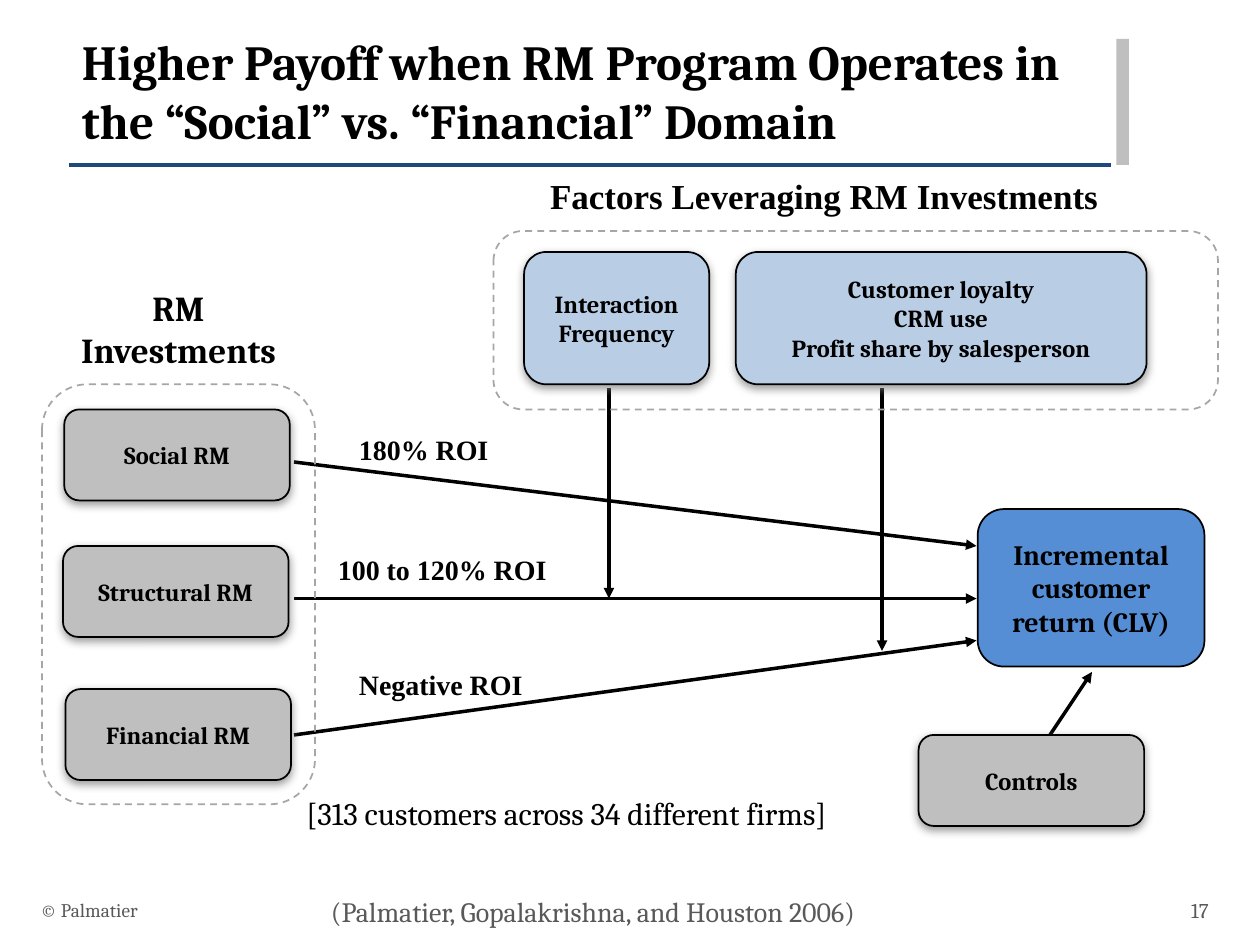
from dataclasses import dataclass

from lxml.etree import SubElement
from pptx import Presentation
from pptx.dml.color import RGBColor
from pptx.enum.dml import MSO_LINE_DASH_STYLE as Dash
from pptx.enum.shapes import MSO_CONNECTOR as Conn, MSO_SHAPE as Shape
from pptx.enum.text import MSO_ANCHOR as Anchor, MSO_AUTO_SIZE as Auto, PP_ALIGN as Align
from pptx.oxml import parse_xml
from pptx.oxml.ns import nsdecls, qn
from pptx.util import Pt


@dataclass(frozen=True)
class Theme:
    black: str = "000000"
    grey: str = "BFBFBF"
    frame: str = "A6A6A6"
    muted: str = "595959"
    navy: str = "1F497D"
    pale: str = "B9CDE5"
    blue: str = "558ED5"
    serif: str = "Cambria"
    times: str = "Times New Roman"
    title: int = 28
    heading: int = 20
    note: int = 18
    label: int = 16
    box: int = 14
    number: int = 12
    footer: int = 11


T = Theme()


@dataclass(frozen=True)
class Box:
    x: float
    y: float
    w: float
    h: float
    lines: tuple[str, ...]
    fill: str = T.grey
    size: int = T.box
    shadow: bool = True


@dataclass(frozen=True)
class Label:
    x: float
    y: float
    w: float
    h: float
    text: str
    size: int = T.label
    font: str = T.times
    bold: bool = True
    color: str = T.black
    align: Align = Align.LEFT
    anchor: Anchor = Anchor.TOP


@dataclass(frozen=True)
class Line:
    x1: float
    y1: float
    x2: float
    y2: float
    color: str = T.black
    arrow: bool = True


@dataclass(frozen=True)
class Frame:
    x: float
    y: float
    w: float
    h: float


TITLE = Label(39.6, 14.4, 594.7, 63.4,
              "Higher Payoff when RM Program Operates in the “Social” vs. “Financial” Domain",
              T.title, T.serif)
RULE = Line(39.6, 94.3, 635, 94.3, T.navy, False)
ARROWS = (
    Line(168, 342, 558, 342),
    Line(168, 420, 558, 366),
    Line(504, 222, 504, 372),
    Line(168, 264, 558, 312),
    Line(600, 420, 624, 384),
    Line(348, 222, 348, 342),
)
FRAMES = (Frame(24, 219.6, 156, 240), Frame(282, 132, 414, 102))
LABELS = (
    Label(36, 160, 132, 55.4, "RM Investments", T.heading, T.serif, align=Align.CENTER),
    Label(216, 96, 510, 31.5, "Factors Leveraging RM Investments", T.heading, align=Align.CENTER),
    Label(198, 243.5, 90, 26.6, "180% ROI"),
    Label(198, 378, 126, 26.6, "Negative ROI"),
    Label(186, 312, 138, 26.6, "100 to 120% ROI"),
    Label(168, 450, 360, 29, "[313 customers across 34 different firms]", T.note, T.serif, False),
    Label(182, 507.6, 360, 26.6, "(Palmatier, Gopalakrishna, and Houston 2006)",
          T.label, T.serif, False, T.muted),
    Label(16, 505.5, 482, 28.8, "© Palmatier", T.footer, T.serif, False, T.muted,
          anchor=Anchor.MIDDLE),
    Label(653.8, 505.5, 44, 28.8, "17", T.number, T.serif, False, T.muted,
          Align.RIGHT, Anchor.MIDDLE),
)
BOXES = (
    Box(36.7, 234, 128.9, 52, ("Social RM",)),
    Box(36, 312, 128.9, 52, ("Structural RM",)),
    Box(37.4, 393.8, 128.9, 52, ("Financial RM",)),
    Box(524.9, 420, 128.9, 52, ("Controls",)),
    Box(299.5, 144, 105.8, 75.6, ("Interaction Frequency",), T.pale),
    Box(420.5, 144, 234.7, 75.6,
        ("Customer loyalty", "CRM use", "Profit share by salesperson"), T.pale),
    Box(558.7, 290.9, 129.6, 90, ("Incremental customer return (CLV)",), T.blue, T.label, False),
)


def rgb(color: str) -> RGBColor:
    return RGBColor.from_string(color)


def place(b) -> tuple:
    return Pt(b.x), Pt(b.y), Pt(b.w), Pt(b.h)


def write(tf, lines, size, font, bold, color, align, anchor) -> None:
    tf.word_wrap = True
    tf.auto_size = Auto.NONE
    tf.vertical_anchor = anchor
    for i, line in enumerate(lines):
        p = tf.add_paragraph() if i else tf.paragraphs[0]
        p.alignment = align
        r = p.add_run()
        r.text = line
        r.font.size, r.font.name, r.font.bold = Pt(size), font, bold
        r.font.color.rgb = rgb(color)


def write_label(tf, b: Label) -> None:
    write(tf, (b.text,), b.size, b.font, b.bold, b.color, b.align, b.anchor)


def draw_title(s, b: Label) -> None:
    sp = s.shapes.title
    sp.left, sp.top, sp.width, sp.height = place(b)
    write_label(sp.text_frame, b)


def draw_line(s, b: Line) -> None:
    sp = s.shapes.add_connector(Conn.STRAIGHT, Pt(b.x1), Pt(b.y1), Pt(b.x2), Pt(b.y2))
    sp.line.color.rgb = rgb(b.color)
    sp.line.width = Pt(2)
    if b.arrow:
        SubElement(sp.line._get_or_add_ln(), qn("a:tailEnd"), type="triangle")
    SubElement(sp._element.spPr, qn("a:effectLst"))


def draw_bar(s, b: Frame) -> None:
    sp = s.shapes.add_shape(Shape.RECTANGLE, *place(b))
    sp.shadow.inherit = False
    sp.fill.solid()
    sp.fill.fore_color.rgb = rgb(T.grey)
    sp.line.fill.background()


def rounded(s, b, line: str):
    sp = s.shapes.add_shape(Shape.ROUNDED_RECTANGLE, *place(b))
    sp.shadow.inherit = False
    sp.line.color.rgb = rgb(line)
    sp.line.width = Pt(1)
    return sp


def draw_frame(s, b: Frame) -> None:
    sp = rounded(s, b, T.frame)
    sp.fill.background()
    sp.line.dash_style = Dash.DASH


def draw_label(s, b: Label) -> None:
    write_label(s.shapes.add_textbox(*place(b)).text_frame, b)


def draw_box(s, b: Box) -> None:
    sp = rounded(s, b, T.black)
    sp.fill.solid()
    sp.fill.fore_color.rgb = rgb(b.fill)
    if b.shadow:
        sp._element.spPr.find(qn("a:effectLst")).append(parse_xml(
            f'<a:outerShdw {nsdecls("a")} blurRad="{Pt(5)}" dist="{Pt(2)}" dir="5400000" '
            'rotWithShape="0"><a:srgbClr val="808080"><a:alpha val="75000"/>'
            '</a:srgbClr></a:outerShdw>'))
    write(sp.text_frame, b.lines, b.size, T.serif, True, T.black, Align.CENTER, Anchor.MIDDLE)


def main() -> None:
    prs = Presentation()
    prs.slide_width, prs.slide_height = Pt(720), Pt(540)
    s = prs.slides.add_slide(prs.slide_layouts[5])
    draw_title(s, TITLE)
    draw_bar(s, Frame(637.9, 22.3, 7.2, 72))
    for line in (RULE, *ARROWS):
        draw_line(s, line)
    for frame in FRAMES:
        draw_frame(s, frame)
    for label in LABELS:
        draw_label(s, label)
    for box in BOXES:
        draw_box(s, box)
    prs.save("out.pptx")


if __name__ == "__main__":
    main()
